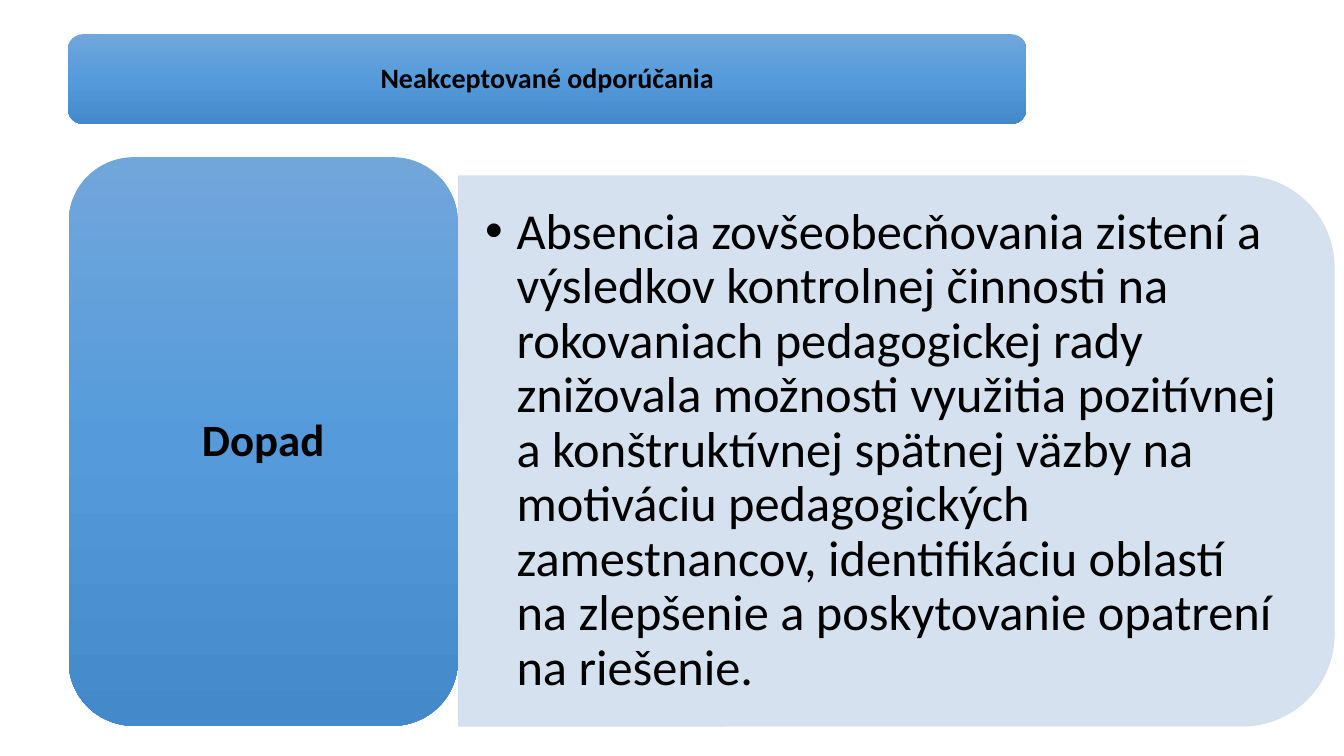
import pptx
import pptx.dml.color
import pptx.enum.shapes
import pptx.enum.text
import pptx.oxml
import pptx.oxml.ns
import pptx.util
from lxml import etree

Pt = pptx.util.Pt
SHAPES = pptx.enum.shapes.MSO_SHAPE
ALIGN = pptx.enum.text.PP_ALIGN
qn = pptx.oxml.ns.qn

FONT = "Calibri"
BLACK = "000000"
PALE_BLUE = "D2DEEF"
BLUE_GRADIENT = [(0, "71A6DB"), (50, "559BDB"), (100, "448ACA")]

HEADER_BOX = (48.5, 24.5, 684.7, 64)
LABEL_BOX = (49, 112.3, 278, 406.1)
PANEL_BOX = (327.3, 125.6, 625.7, 393.1)

IMPACT = (
    "Absencia zovšeobecňovania zistení a výsledkov kontrolnej činnosti na "
    "rokovaniach pedagogickej rady znižovala možnosti využitia pozitívnej a "
    "konštruktívnej spätnej väzby na motiváciu pedagogických zamestnancov, "
    "identifikáciu oblastí na zlepšenie a poskytovanie opatrení na riešenie."
)


def rgb(value):
    return pptx.dml.color.RGBColor.from_string(value)


def set_all(target, values):
    for name, value in values.items():
        setattr(target, name, value)


def place(shape, box):
    lengths = [Pt(length) for length in box]
    set_all(shape, dict(zip(("left", "top", "width", "height"), lengths)))


def inset(box, gap):
    left, top, width, height = box
    return left + gap, top + gap, width - 2 * gap, height - 2 * gap


def write(shape, text, size, align, bold, margins):
    """Fill a text shape with one paragraph; margins are horizontal, vertical."""
    across, down = (Pt(margin) for margin in margins)
    frame = shape.text_frame
    set_all(frame, {
        "word_wrap": True,
        "auto_size": pptx.enum.text.MSO_AUTO_SIZE.NONE,
        "vertical_anchor": pptx.enum.text.MSO_ANCHOR.MIDDLE,
        "margin_left": across, "margin_right": across,
        "margin_top": down, "margin_bottom": down,
    })
    para = frame.paragraphs[0]
    set_all(para, {"alignment": align, "line_spacing": 0.9,
                   "space_before": Pt(0), "space_after": Pt(0)})
    span = para.add_run()
    span.text = text
    set_all(span.font, {"name": FONT, "size": Pt(size), "bold": bold})
    span.font.color.rgb = rgb(BLACK)
    return para


def add_bullet(para, indent):
    properties = para._p.get_or_add_pPr()
    properties.set("marL", str(Pt(indent)))
    properties.set("indent", str(-Pt(indent)))
    etree.SubElement(properties, qn("a:buFont"), typeface="Arial")
    etree.SubElement(properties, qn("a:buChar"), char="•")


def add_gradient_card(page, box):
    card = page.shapes.add_shape(SHAPES.ROUNDED_RECTANGLE,
                                 *[Pt(length) for length in box])
    card.shadow.inherit = False
    card.line.fill.background()
    card.fill.gradient()
    card.fill.gradient_angle = 270
    stops = next(card.element.iter(qn("a:gsLst")))
    stops.clear()
    for position, colour in BLUE_GRADIENT:
        stop = etree.SubElement(stops, qn("a:gs"), pos=str(position * 1000))
        etree.SubElement(stop, qn("a:srgbClr"), val=colour)
    return card


def add_header(page, box):
    card = add_gradient_card(page, box)
    title = page.shapes.title
    place(title, inset(box, 3.2))
    write(title, "Neakceptované odporúčania", 20, ALIGN.CENTER, True, (6, 6))
    card.element.addnext(title.element)  # the title lies in front of its card


def add_label(page, box):
    add_gradient_card(page, box)
    label = page.shapes.add_textbox(0, 0, 0, 0)
    place(label, inset(box, 13.6))
    write(label, "Dopad", 32, ALIGN.CENTER, True, (9.6, 4.8))


def add_panel(page, box):
    """Draw the pale panel, a shape turned so that its round end faces right."""
    left, top, width, height = box
    shift = (width - height) / 2
    panel = page.shapes.add_shape(SHAPES.ROUND_2_SAME_RECTANGLE, 0, 0, 0, 0)
    place(panel, (left + shift, top - shift, height, width))
    panel.rotation = 90
    panel.shadow.inherit = False
    panel.fill.solid()
    panel.fill.fore_color.rgb = rgb(PALE_BLUE)
    panel.line.color.rgb = rgb(PALE_BLUE)
    panel.line.width = Pt(0.5)
    for colour in panel.element.spPr.iter(qn("a:srgbClr")):
        etree.SubElement(colour, qn("a:alpha"), val="90000")

    body = page.shapes.add_textbox(0, 0, 0, 0)
    place(body, (left, top + 19.2, width - 19.2, height - 38.4))
    para = write(body, IMPACT, 36, ALIGN.LEFT, False, (19.2, 9.6))
    add_bullet(para, 22.5)


def main():
    deck = pptx.Presentation()
    set_all(deck, {"slide_width": Pt(960), "slide_height": Pt(540)})
    page = deck.slides.add_slide(deck.slide_layouts.get_by_name("Title Only"))
    add_panel(page, PANEL_BOX)
    add_label(page, LABEL_BOX)
    add_header(page, HEADER_BOX)
    deck.save("out.pptx")


if __name__ == "__main__":
    main()
